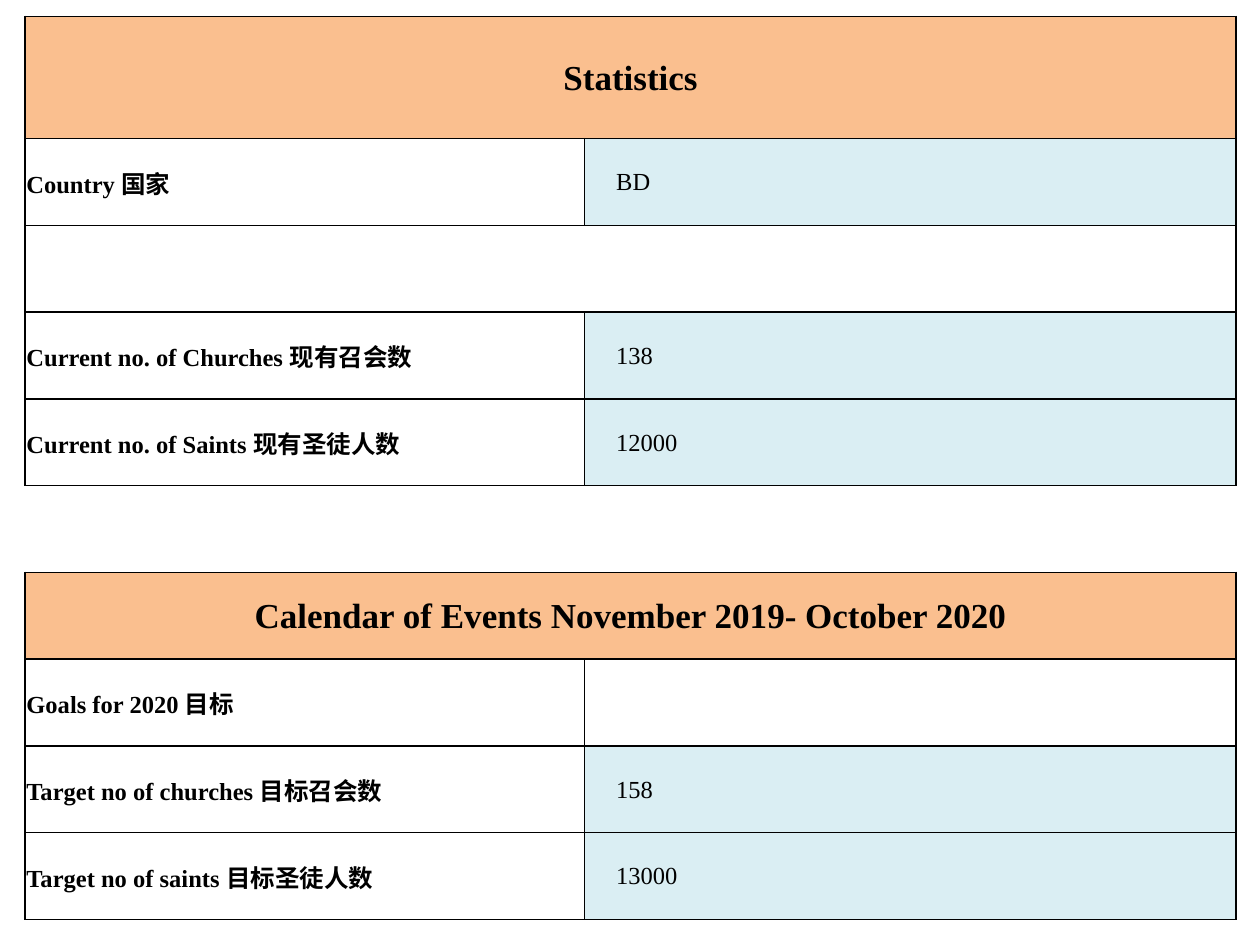
from lxml import etree
from pptx import Presentation
from pptx.dml.color import RGBColor
from pptx.enum import text
from pptx.oxml import ns
from pptx.util import Pt

# Content: one entry per row; a row holds its kind, label and value
ROWS = [
    ("heading", "Statistics", ""),
    ("entry", "Country 国家", "BD"),
    ("spacer", "", ""),
    ("entry", "Current no. of Churches 现有召会数", "138"),
    ("entry", "Current no. of Saints 现有圣徒人数", "12000"),
    ("gap", "", ""),
    ("heading", "Calendar of Events November 2019- October 2020", ""),
    ("entry", "Goals for 2020 目标", ""),
    ("entry", "Target no of churches 目标召会数", "158"),
    ("entry", "Target no of saints 目标圣徒人数", "13000"),
]

# Layout and formats
LEFT, TOP = 14.4, 9.4
COLUMN_WIDTHS = [319.7, 372.2]
FIRST_ROW_HEIGHT, ROW_HEIGHT = 69.8, 49.6
VALUE_INDENT = 18
ORANGE, BLUE, BLACK = "FABF8F", "DAEEF3", "000000"
HEADING_FONT = {"name": "Times New Roman", "size": Pt(20), "bold": True}
LABEL_FONT = {**HEADING_FONT, "size": Pt(14)}
VALUE_FONT = {**LABEL_FONT, "bold": False}
CELL_FORMAT = {
    "margin_left": Pt(0.7), "margin_right": Pt(0.7),
    "margin_top": Pt(0.7), "margin_bottom": Pt(0),
    "vertical_anchor": text.MSO_ANCHOR.MIDDLE,
}


def color(hex_value):
    return RGBColor.from_string(hex_value)


def apply(target, formats):
    for name, value in formats.items():
        setattr(target, name, value)


def set_borders(cell, sides):
    properties = cell._tc.get_or_add_tcPr()
    for side in "LRTB":
        line = etree.SubElement(properties, ns.qn(f"a:ln{side}"), w=str(Pt(1)))
        if side in sides:
            fill = etree.SubElement(line, ns.qn("a:solidFill"))
            etree.SubElement(fill, ns.qn("a:srgbClr"), val=BLACK)
        else:
            etree.SubElement(line, ns.qn("a:noFill"))


def fill_cell(cell, content, font, fill="", sides="LRTB"):
    apply(cell, CELL_FORMAT)
    set_borders(cell, sides)
    if fill:
        cell.fill.solid()
        cell.fill.fore_color.rgb = color(fill)
    else:
        cell.fill.background()
    paragraph = cell.text_frame.paragraphs[0]
    apply(paragraph.font, font)
    if content:
        run = paragraph.add_run()
        run.text = content
        apply(run.font, font)
        run.font.color.rgb = color(BLACK)


# Slide
deck = Presentation()
deck.slide_width, deck.slide_height = Pt(720), Pt(540)
slide = deck.slides.add_slide(deck.slide_layouts[6])

# Table grid
heights = [FIRST_ROW_HEIGHT] + [ROW_HEIGHT] * (len(ROWS) - 1)
report = slide.shapes.add_table(
    len(ROWS), 2, Pt(LEFT), Pt(TOP), Pt(sum(COLUMN_WIDTHS)), Pt(sum(heights))
).table
apply(report, {"first_row": False, "horz_banding": False})
for column, width in zip(report.columns, COLUMN_WIDTHS):
    column.width = Pt(width)

# Rows
for index, (kind, label, value) in enumerate(ROWS):
    report.rows[index].height = Pt(heights[index])
    label_cell, value_cell = report.cell(index, 0), report.cell(index, 1)
    heading = kind == "heading"
    sides = "TB" if kind == "gap" else "LRTB"
    band = ORANGE if heading else ""
    fill_cell(label_cell, label, HEADING_FONT if heading else LABEL_FONT, band, sides)
    fill_cell(value_cell, value, VALUE_FONT, BLUE if value else band, sides)
    if value:
        value_cell.margin_left = Pt(VALUE_INDENT)
    if heading:
        label_cell.text_frame.paragraphs[0].alignment = text.PP_ALIGN.CENTER
    if kind in ("heading", "spacer"):
        label_cell.merge(value_cell)

deck.save("out.pptx")
